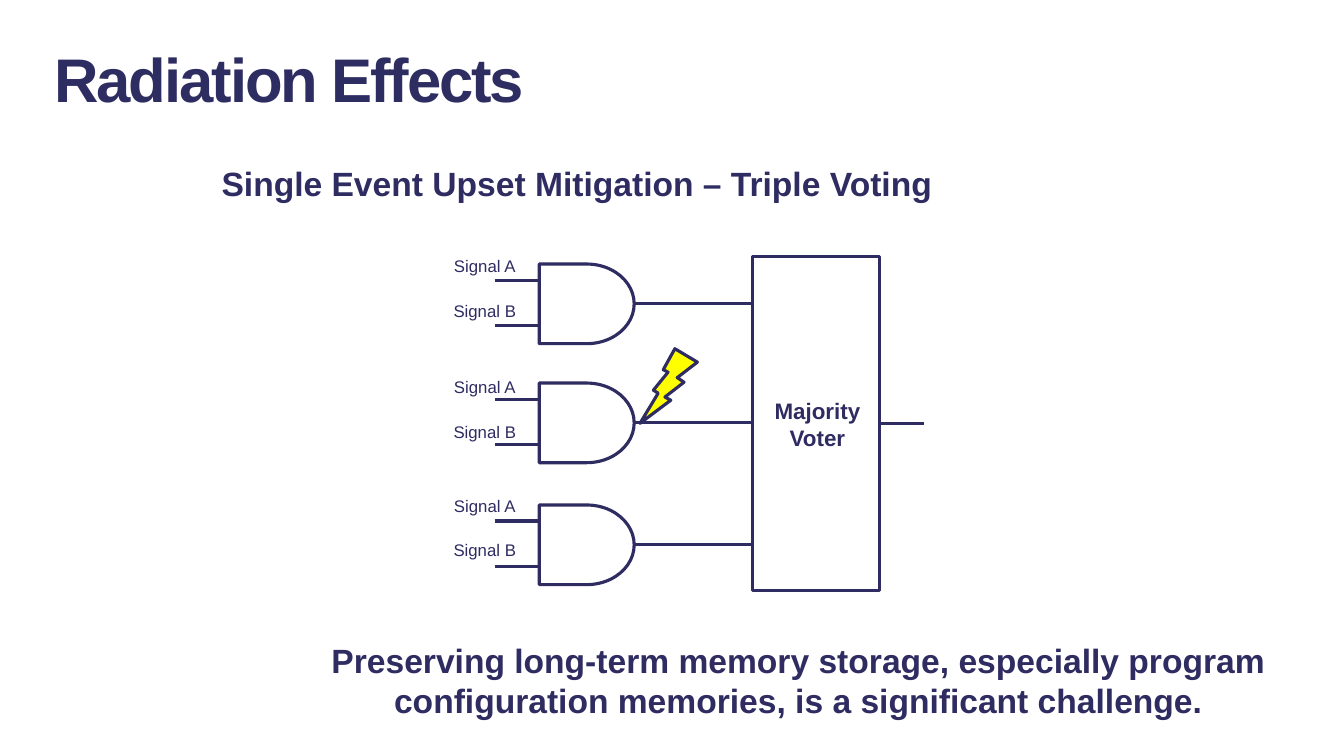
from lxml import etree
from pptx import Presentation
from pptx.dml.color import RGBColor
from pptx.enum.shapes import MSO_CONNECTOR, MSO_SHAPE
from pptx.enum.text import MSO_ANCHOR, PP_ALIGN
from pptx.oxml.ns import qn
from pptx.util import Pt

RECTANGLE = MSO_SHAPE.RECTANGLE
DELAY = MSO_SHAPE.FLOWCHART_DELAY
BOLT = MSO_SHAPE.LIGHTNING_BOLT
STRAIGHT = MSO_CONNECTOR.STRAIGHT
LEFT = PP_ALIGN.LEFT
CENTER = PP_ALIGN.CENTER
TOP = MSO_ANCHOR.TOP
BOTTOM = MSO_ANCHOR.BOTTOM
RIGHT_SIDE = 3

FONT = "Arial"
NAVY = "2E2C61"
TITLE_NAVY = "2E2D62"
YELLOW = "FFFF00"
LINE_WIDTH = 2.25

GATE_LEFT, GATE_WIDTH, GATE_HEIGHT = 385.2, 67.8, 56.9
GATES = [(188.6, 179.3), (273.6, 265.7), (360.7, 350.6)]
INPUTS = [("Signal A", 11.5, 0), ("Signal B", 44, 31.7)]
PIN_LENGTH = 31.7
LABEL_LEFT, LABEL_WIDTH, LABEL_HEIGHT = 300.2, 92.2, 21.6
VOTER_LEFT, VOTER_TOP, VOTER_WIDTH, VOTER_HEIGHT = 537.8, 183, 90.7, 239


def color(hex_code):
    return RGBColor.from_string(hex_code)


def add_text(slide, text, left, top, width, height, size, bold=False,
             align=CENTER, ink=NAVY, anchor=TOP):
    box = slide.shapes.add_textbox(Pt(left), Pt(top), Pt(width), Pt(height))
    frame = box.text_frame
    frame.word_wrap = True
    frame.vertical_anchor = anchor
    frame.text = text
    paragraph = frame.paragraphs[0]
    paragraph.alignment = align
    font = paragraph.runs[0].font
    font.name = FONT
    font.size = Pt(size)
    font.bold = bold
    font.color.rgb = color(ink)
    return box


def add_title(slide, text):
    title = add_text(slide, text, 31.7, 22.3, 708.5, 60.5, 44, True,
                     LEFT, TITLE_NAVY, BOTTOM)
    title.text_frame.margin_bottom = Pt(1)
    run = title.text_frame.paragraphs[0].runs[0]
    run.font._element.set("spc", "-150")


def add_outline(slide, kind, left, top, width, height, fill=None):
    shape = slide.shapes.add_shape(kind, Pt(left), Pt(top), Pt(width), Pt(height))
    shape.shadow.inherit = False
    if fill:
        shape.fill.solid()
        shape.fill.fore_color.rgb = color(fill)
    else:
        shape.fill.background()
    shape.line.color.rgb = color(NAVY)
    shape.line.width = Pt(LINE_WIDTH)
    return shape


def add_wire(slide, start, end, y):
    wire = slide.shapes.add_connector(STRAIGHT, Pt(start), Pt(y), Pt(end), Pt(y))
    wire.line.color.rgb = color(NAVY)
    wire.line.width = Pt(LINE_WIDTH)
    etree.SubElement(wire._element.spPr, qn("a:effectLst"))
    return wire


def add_gate(slide, top, label_top):
    add_outline(slide, DELAY, GATE_LEFT, top, GATE_WIDTH, GATE_HEIGHT)
    for signal, pin_offset, label_offset in INPUTS:
        add_wire(slide, GATE_LEFT - PIN_LENGTH, GATE_LEFT, top + pin_offset)
        add_text(slide, signal, LABEL_LEFT, label_top + label_offset,
                 LABEL_WIDTH, LABEL_HEIGHT, 12)
    add_wire(slide, GATE_LEFT + GATE_WIDTH, VOTER_LEFT, top + GATE_HEIGHT / 2)


def add_voter(slide):
    voter = add_outline(slide, RECTANGLE, VOTER_LEFT, VOTER_TOP,
                        VOTER_WIDTH, VOTER_HEIGHT)
    add_text(slide, "Majority Voter", VOTER_LEFT, 280.1, 92.2, 46.1, 16, True)
    right = VOTER_LEFT + VOTER_WIDTH
    output = add_wire(slide, right, right + PIN_LENGTH,
                      VOTER_TOP + VOTER_HEIGHT / 2)
    output.begin_connect(voter, RIGHT_SIDE)


def add_upset(slide):
    bolt = add_outline(slide, BOLT, 457.2, 249.1, 41, 53.3, YELLOW)
    bolt._element.spPr.find(qn("a:xfrm")).set("flipH", "1")


def main():
    deck = Presentation()
    deck.slide_width = Pt(960)
    deck.slide_height = Pt(540)
    slide = deck.slides.add_slide(deck.slide_layouts[6])
    add_title(slide, "Radiation Effects")
    add_text(slide, "Single Event Upset Mitigation – Triple Voting",
             151.2, 112.5, 532.8, 36.7, 24, True, LEFT)
    add_upset(slide)
    for top, label_top in GATES:
        add_gate(slide, top, label_top)
    add_voter(slide)
    add_text(slide, "Preserving long-term memory storage, especially program "
             "configuration memories, is a significant challenge.",
             216, 453.5, 708.5, 65.5, 24, True)
    deck.save("out.pptx")


if __name__ == "__main__":
    main()
